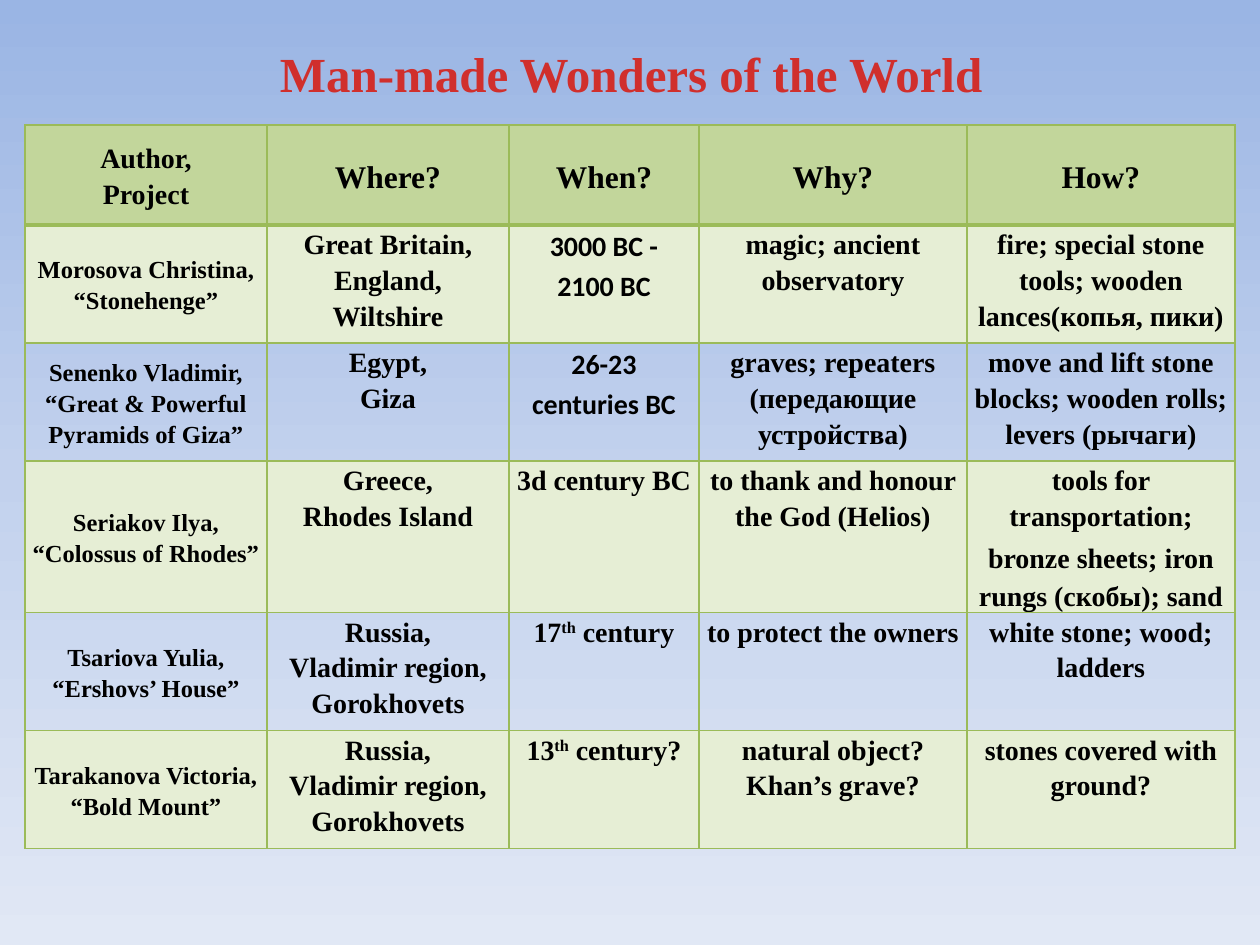
from copy import deepcopy
from dataclasses import dataclass
from pptx import Presentation
from pptx.dml.color import RGBColor
from pptx.enum.text import MSO_ANCHOR, MSO_AUTO_SIZE, PP_ALIGN
from pptx.oxml import parse_xml
from pptx.oxml.ns import nsdecls, qn
from pptx.util import Pt

SCALE = 914400 / 126  # EMU in one px


@dataclass(frozen=True)
class Theme:
    serif: str = "Times New Roman"
    sans: str = "Calibri"
    ink: str = "000000"
    title: str = "D02F2C"
    head: str = "C2D69B"
    band: str = "E6EED5"
    rule: str = "9BBB59"
    sky: tuple = ((0, "9AB5E4"), (0.5, "C2D1ED"), (1, "E1E8F5"))
    big: int = 28
    lead: int = 18
    body: int = 16
    small: int = 14
    thin: float = 1
    thick: float = 2.25


THEME = Theme()

# "\n" parts paragraphs, "|" parts runs, "^" raises a run
HEADS = ["Author,\nProject", "Where?", "When?", "Why?", "How?"]
WONDERS = [
    ["Morosova Christina,\n“Stonehenge”", "Great Britain, England,\nWiltshire",
     "3000 BC -\n2100 BC", "magic; ancient observatory",
     "fire; special stone tools; wooden lances(копья, пики)"],
    ["Senenko Vladimir,\n“Great & Powerful Pyramids of Giza”", "Egypt,\nGiza",
     "26-23 centuries BC", "graves; repeaters (передающие устройства)",
     "move and lift stone blocks; wooden rolls; levers (рычаги)"],
    ["Seriakov Ilya,\n“Colossus of Rhodes”", "Greece,\nRhodes Island",
     "3d century BC", "to thank and honour the God (Helios)",
     "tools for transportation; bronze sheets;| |iron rungs (скобы); sand"],
    ["Tsariova Yulia,\n“Ershovs’ House”", "Russia,\nVladimir region,\nGorokhovets",
     "17|^th| century", "to protect the owners", "white stone; wood; ladders"],
    ["Tarakanova Victoria,\n“Bold Mount”", "Russia,\nVladimir region,\nGorokhovets",
     "13|^th| century?", "natural object?\nKhan’s grave?",
     "stones covered with ground?"],
]
COLS = [242, 242, 190, 268, 268]
ROWS = [100] + [118] * len(WONDERS)


def px(n):
    return round(n * SCALE)


def put(obj, values):
    for name, value in values.items():
        setattr(obj, name, value)


def style(font, size, face=THEME.serif, color=THEME.ink, bold=True):
    put(font, {"size": Pt(size), "name": face, "bold": bold})
    font.color.rgb = RGBColor.from_string(color)


def paint_sky(slide):
    fill = slide.background.fill
    fill.gradient()
    fill.gradient_angle = 270
    # The default gradient has two stops: add a third
    stops = next(slide.element.iter(qn("a:gsLst")))
    stops.append(deepcopy(stops[-1]))
    for stop, (place, color) in zip(fill.gradient_stops, THEME.sky):
        stop.position = place
        stop.color.rgb = RGBColor.from_string(color)


def add_title(slide, box, text):
    title = slide.shapes.title
    put(title, dict(zip(("left", "top", "width", "height"), map(px, box))))
    frame = title.text_frame
    frame.text = text
    put(frame, {"word_wrap": False, "auto_size": MSO_AUTO_SIZE.NONE,
                "vertical_anchor": MSO_ANCHOR.MIDDLE})
    par = frame.paragraphs[0]
    par.alignment = PP_ALIGN.CENTER
    style(par.runs[0].font, THEME.big, color=THEME.title)


def add_rules(cell, row):
    thick = {0: "B", 1: "T"}.get(row)
    for side in "LRTB":
        width = Pt(THEME.thick if side == thick else THEME.thin)
        cell._tc.get_or_add_tcPr().append(parse_xml(
            f'<a:ln{side} {nsdecls("a")} w="{width}"><a:solidFill>'
            f'<a:srgbClr val="{THEME.rule}"/></a:solidFill></a:ln{side}>'))


def add_text(frame, text, size, face):
    for i, line in enumerate(text.split("\n")):
        par = frame.paragraphs[0] if i == 0 else frame.add_paragraph()
        put(par, {"alignment": PP_ALIGN.CENTER, "line_spacing": 1.15})
        for part in line.split("|"):
            run = par.add_run()
            run.text = part.lstrip("^")
            if part == " ":
                style(run.font, THEME.lead, THEME.sans, bold=False)
            else:
                style(run.font, size, face)
            if part.startswith("^"):
                run.font._element.set("baseline", "30000")


def fill_cell(cell, row, col, text):
    middle = row == 0 or col == 0
    put(cell, {"margin_left": px(6), "margin_right": px(6),
               "margin_top": 0, "margin_bottom": 0,
               "vertical_anchor": MSO_ANCHOR.MIDDLE if middle else MSO_ANCHOR.TOP})
    add_rules(cell, row)
    if row and row % 2 == 0:
        cell.fill.background()
    else:
        cell.fill.solid()
        cell.fill.fore_color.rgb = RGBColor.from_string(THEME.band if row else THEME.head)
    size = THEME.body
    if row == 0 and col:
        size = THEME.lead
    elif row and col == 0:
        size = THEME.small
    face = THEME.sans if col == 2 and row in (1, 2) else THEME.serif
    add_text(cell.text_frame, text, size, face)


def add_grid(slide, left, top):
    table = slide.shapes.add_table(len(ROWS), len(COLS), px(left), px(top),
                                   px(sum(COLS)), px(sum(ROWS))).table
    put(table, {"first_row": False, "horz_banding": False})
    for col, width in zip(table.columns, COLS):
        col.width = px(width)
    for row, height in zip(table.rows, ROWS):
        row.height = px(height)
    for r, texts in enumerate([HEADS] + WONDERS):
        for c, text in enumerate(texts):
            fill_cell(table.cell(r, c), r, c, text)


def main():
    deck = Presentation()
    put(deck, {"slide_width": px(1260), "slide_height": px(945)})
    slide = deck.slides.add_slide(deck.slide_layouts[5])
    paint_sky(slide)
    add_grid(slide, 25, 125)
    add_title(slide, (263, 37, 736, 72), "Man-made Wonders of the World")
    deck.save("out.pptx")


if __name__ == "__main__":
    main()
